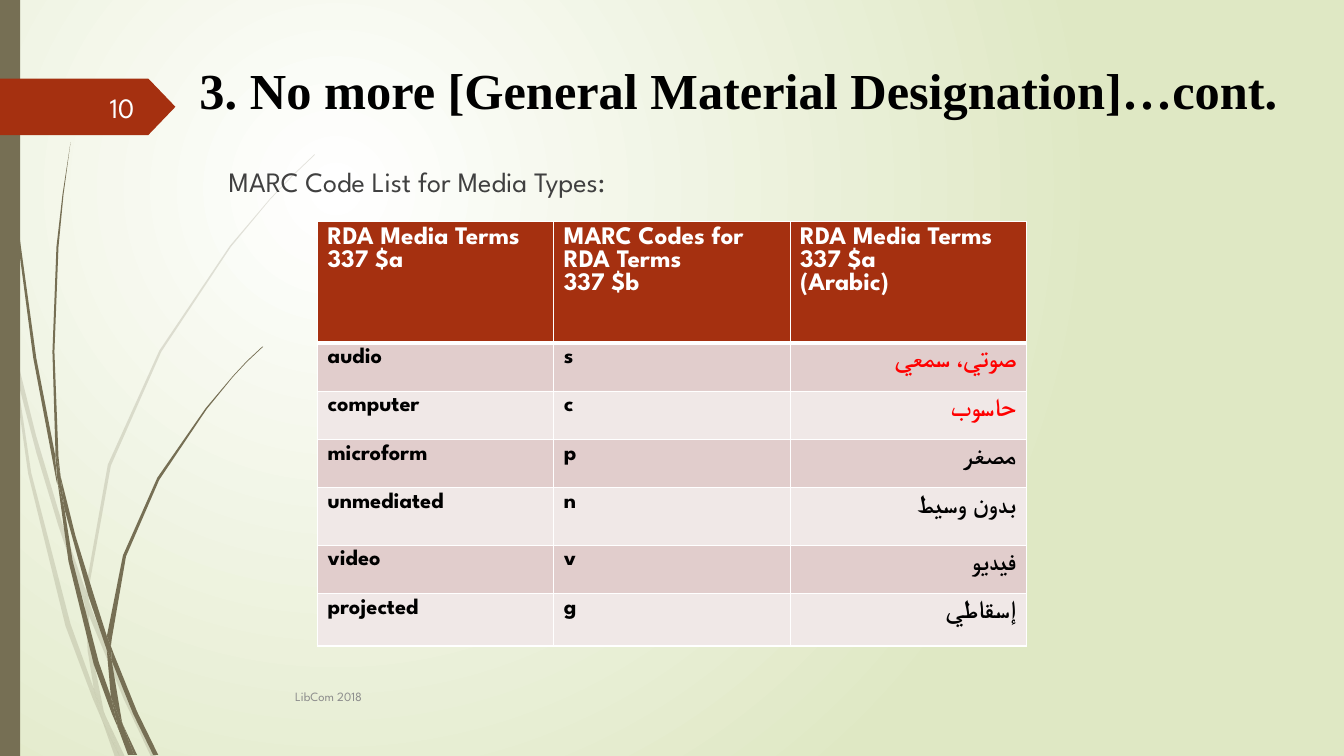
from pptx import Presentation
from pptx.dml.color import RGBColor
from pptx.enum.shapes import MSO_SHAPE as SHAPE
from pptx.enum.text import MSO_ANCHOR as ANCHOR, PP_ALIGN as ALIGN
from pptx.oxml import parse_xml
from pptx.oxml.ns import nsdecls, qn
from pptx.util import Inches, Pt

COLS, ROWS = 1333, 750
CELL = Inches(0.01)
SPARTAN, TIMES = "League Spartan", "Times New Roman"
WHITE = RGBColor(0xFF, 0xFF, 0xFF)
BLACK = RGBColor(0x00, 0x00, 0x00)
RED = RGBColor(0xFF, 0x00, 0x00)
RUST = RGBColor(0xA5, 0x30, 0x10)
OLIVE = RGBColor(0x76, 0x6F, 0x54)
GREEN = RGBColor(0xDF, 0xE8, 0xC4)
DARK_GREY = RGBColor(0x40, 0x40, 0x40)
GREY = RGBColor(0x8C, 0x8C, 0x8C)
NUMBER = RGBColor(0xFE, 0xFF, 0xFF)
BANDS = RGBColor(0xE1, 0xCD, 0xCC), RGBColor(0xF0, 0xE8, 0xE7)

PALE_STALKS = [
    [(11, 350), (9, 322), (0, 282), (0, 299), (10, 344)],
    [(58, 522), (84, 599), (85, 586), (62, 520), (36, 433), (14, 345),
     (17, 376), (36, 449)],
    [(92, 607), (88, 596), (88, 610), (123, 694), (150, 751), (155, 751),
     (127, 692)],
    [(119, 751), (124, 751), (105, 711)],
    [(93, 683), (70, 619), (31, 469), (17, 376), (11, 350), (28, 470),
     (65, 621), (92, 693), (101, 714), (99, 707)],
    [(84, 599), (87, 646), (93, 683), (96, 692), (105, 711), (103, 706),
     (91, 646), (88, 610), (88, 608)],
    [(88, 584), (110, 462), (160, 349), (229, 245), (268, 198), (290, 175),
     (312, 154), (312, 153), (289, 175), (268, 197), (228, 244), (158, 348),
     (107, 461), (85, 584), (85, 586), (88, 596)],
    [(101, 714), (114, 751), (119, 751)],
    [(88, 608), (88, 610), (88, 596), (85, 586), (84, 599)],
    [(96, 692), (93, 683), (99, 707), (101, 714), (119, 751), (105, 711)],
]
DARK_STALKS = [
    [(7, 110), (17, 233), (33, 355), (56, 477), (57, 481), (55, 457),
     (55, 453), (36, 355), (19, 232), (8, 109), (5, 48), (4, 0), (3, 0),
     (4, 48)],
    [(88, 592), (106, 645), (106, 633), (106, 631), (93, 590), (75, 532),
     (60, 472), (64, 505)],
    [(113, 649), (110, 641), (111, 656), (132, 708), (152, 749), (157, 749),
     (136, 706)],
    [(110, 691), (98, 657), (72, 556), (64, 505), (57, 477), (68, 557),
     (93, 659), (111, 708), (117, 722), (116, 717)],
    [(60, 472), (58, 453), (54, 349), (58, 245), (63, 193), (70, 141),
     (62, 193), (56, 245), (52, 349), (55, 449)],
    [(133, 749), (136, 749), (122, 719)],
    [(57, 477), (64, 505), (60, 472), (55, 449), (55, 453)],
    [(111, 633), (125, 552), (158, 476), (205, 406), (231, 374), (245, 359),
     (261, 344), (260, 344), (245, 358), (231, 373), (204, 405), (156, 474),
     (122, 551), (106, 631), (110, 641)],
    [(117, 722), (127, 749), (131, 749)],
    [(106, 645), (110, 691), (116, 706), (122, 719), (121, 716), (111, 656),
     (109, 651)],
    [(106, 645), (109, 651), (111, 656), (110, 641), (106, 631), (106, 633)],
    [(116, 706), (110, 691), (116, 717), (117, 722), (130, 749), (133, 749),
     (122, 719)],
]
HEADINGS = [["RDA Media Terms 337 $a"],
            ["MARC Codes for RDA Terms", "337 $b"],
            ["RDA Media Terms 337 $a", "(Arabic)"]]
MEDIA_TYPES = [
    ("audio", "s", "صوتي، سمعي", RED),
    ("computer", "c", "حاسوب", RED),
    ("microform", "p", "مصغر", BLACK),
    ("unmediated", "n", "بدون وسيط", BLACK),
    ("video", "v", "فيديو", BLACK),
    ("projected", "g", "إسقاطي", BLACK),
]
ROW_HEIGHTS = [120, 48, 48, 48, 57, 48, 52]


def grid(box):
    return [CELL * n for n in box]


def paint(sp, color):
    sp.shadow.inherit = False
    sp.fill.solid()
    sp.fill.fore_color.rgb = color
    sp.line.fill.background()


def write(p, text, size, color, font=SPARTAN, bold=False, align=ALIGN.LEFT):
    p.alignment = align
    r = p.add_run()
    r.text = text
    r.font.size, r.font.name, r.font.bold = Pt(size), font, bold
    r.font.color.rgb = color


def text_box(slide, box, text, size, color, anchor=ANCHOR.TOP, **style):
    tf = slide.shapes.add_textbox(*grid(box)).text_frame
    tf.word_wrap = True
    tf.vertical_anchor = anchor
    write(tf.paragraphs[0], text, size, color, **style)
    return tf


def background(slide):
    slide.background.fill.solid()
    bg = slide.element.find(".//" + qn("p:bgPr"))
    bg.replace(bg[0], parse_xml(
        f'<a:gradFill {nsdecls("a")} rotWithShape="1"><a:gsLst>'
        f'<a:gs pos="0"><a:srgbClr val="{WHITE}"/></a:gs>'
        f'<a:gs pos="100000"><a:srgbClr val="{GREEN}"/></a:gs></a:gsLst>'
        '<a:path path="circle"><a:fillToRect l="50000" t="50000" '
        'r="100000" b="100000"/></a:path></a:gradFill>'))


def stalks(slide, left, top, outlines, opacity):
    group = slide.shapes.add_group_shape()
    for outline in outlines:
        points = [(left + x, top + y) for x, y in outline]
        builder = group.shapes.build_freeform(*points[0], scale=CELL)
        builder.add_line_segments(points[1:], close=True)
        sp = builder.convert_to_shape()
        paint(sp, OLIVE)
        if opacity < 100:
            color = sp.element.spPr.find(qn("a:solidFill"))[0]
            color.append(parse_xml(
                f'<a:alpha {nsdecls("a")} val="{opacity * 1000}"/>'))


def side_decor(slide, left, top):
    stalks(slide, left, top, PALE_STALKS, 20)
    stalks(slide, left, top, DARK_STALKS, 100)
    bar = slide.shapes.add_shape(SHAPE.RECTANGLE, *grid((left, top, 20, ROWS)))
    paint(bar, OLIVE)


def page_tag(slide, left, top, width, height):
    tag = slide.shapes.add_shape(SHAPE.PENTAGON, *grid((left, top, width, height)))
    tag.adjustments[0] = 0.48
    paint(tag, RUST)
    text_box(slide, (left + 58, top + 8, 85, 40), "10", 20, NUMBER,
             ANCHOR.MIDDLE, align=ALIGN.RIGHT)


def style_cell(cell, color, bottom):
    cell.fill.solid()
    cell.fill.fore_color.rgb = color
    edges = [("L", 1), ("R", 1), ("T", 1), ("B", bottom)]
    for i, (side, points) in enumerate(edges):
        cell._tc.get_or_add_tcPr().insert(i, parse_xml(
            f'<a:ln{side} {nsdecls("a")} w="{Pt(points)}"><a:solidFill>'
            f'<a:srgbClr val="{WHITE}"/></a:solidFill></a:ln{side}>'))


def media_table(slide, left, top, width):
    box = left, top, width, sum(ROW_HEIGHTS)
    table = slide.shapes.add_table(len(ROW_HEIGHTS), 3, *grid(box)).table
    for column in table.columns:
        column.width = CELL * width // 3
    for row, height in zip(table.rows, ROW_HEIGHTS):
        row.height = CELL * height
    for cell, lines in zip(table.rows[0].cells, HEADINGS):
        style_cell(cell, RUST, 3)
        tf = cell.text_frame
        for i, line in enumerate(lines):
            p = tf.add_paragraph() if i else tf.paragraphs[0]
            write(p, line, 18, WHITE, bold=True)
    for i, (term, code, arabic, color) in enumerate(MEDIA_TYPES):
        cells = list(table.rows[i + 1].cells)
        for cell in cells:
            style_cell(cell, BANDS[i % 2], 1)
        term_p, code_p, arabic_p = [c.text_frame.paragraphs[0] for c in cells]
        write(term_p, term, 16, BLACK, bold=True)
        write(code_p, code, 16, BLACK, bold=True)
        write(arabic_p, arabic, 18, color, TIMES, True, ALIGN.RIGHT)


def media_types_slide(prs):
    slide = prs.slides.add_slide(prs.slide_layouts[6])
    background(slide)
    side_decor(slide, 0, 0)
    page_tag(slide, 0, 78, 174, 56)
    tf = text_box(slide, (217, 158, 900, 495),
                  "MARC Code List for Media Types:", 20, DARK_GREY)
    tf.paragraphs[0].space_before = Pt(10)
    media_table(slide, 315, 220, 703)
    text_box(slide, (283, 671, 833, 40), "LibCom 2018", 9, GREY, ANCHOR.MIDDLE)
    text_box(slide, (188, 54, 1101, 64),
             "3. No more [General Material Designation]…cont.", 36, BLACK,
             font=TIMES, bold=True)


def main():
    prs = Presentation()
    prs.slide_width, prs.slide_height = CELL * COLS, CELL * ROWS
    media_types_slide(prs)
    prs.save("out.pptx")


if __name__ == "__main__":
    main()
